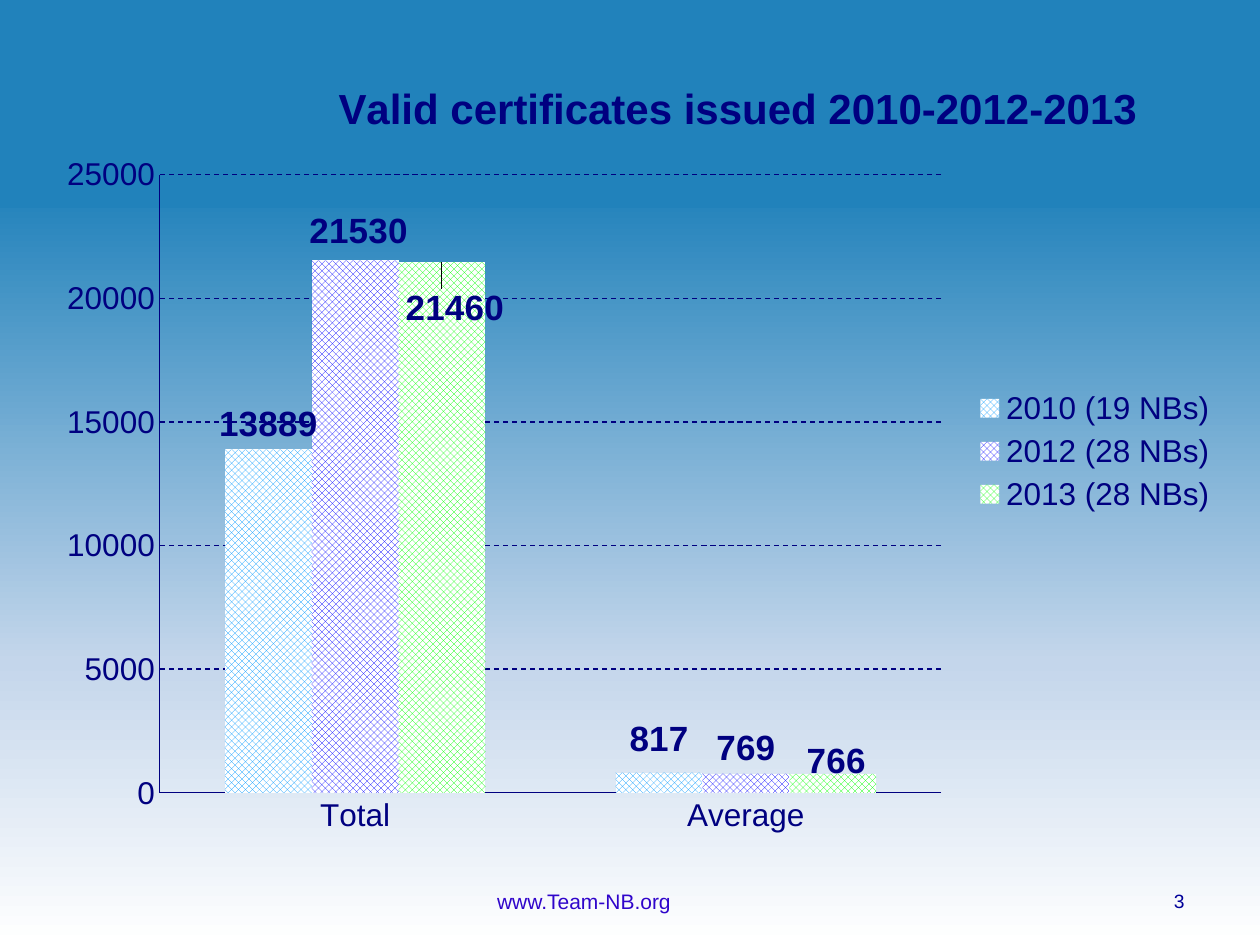
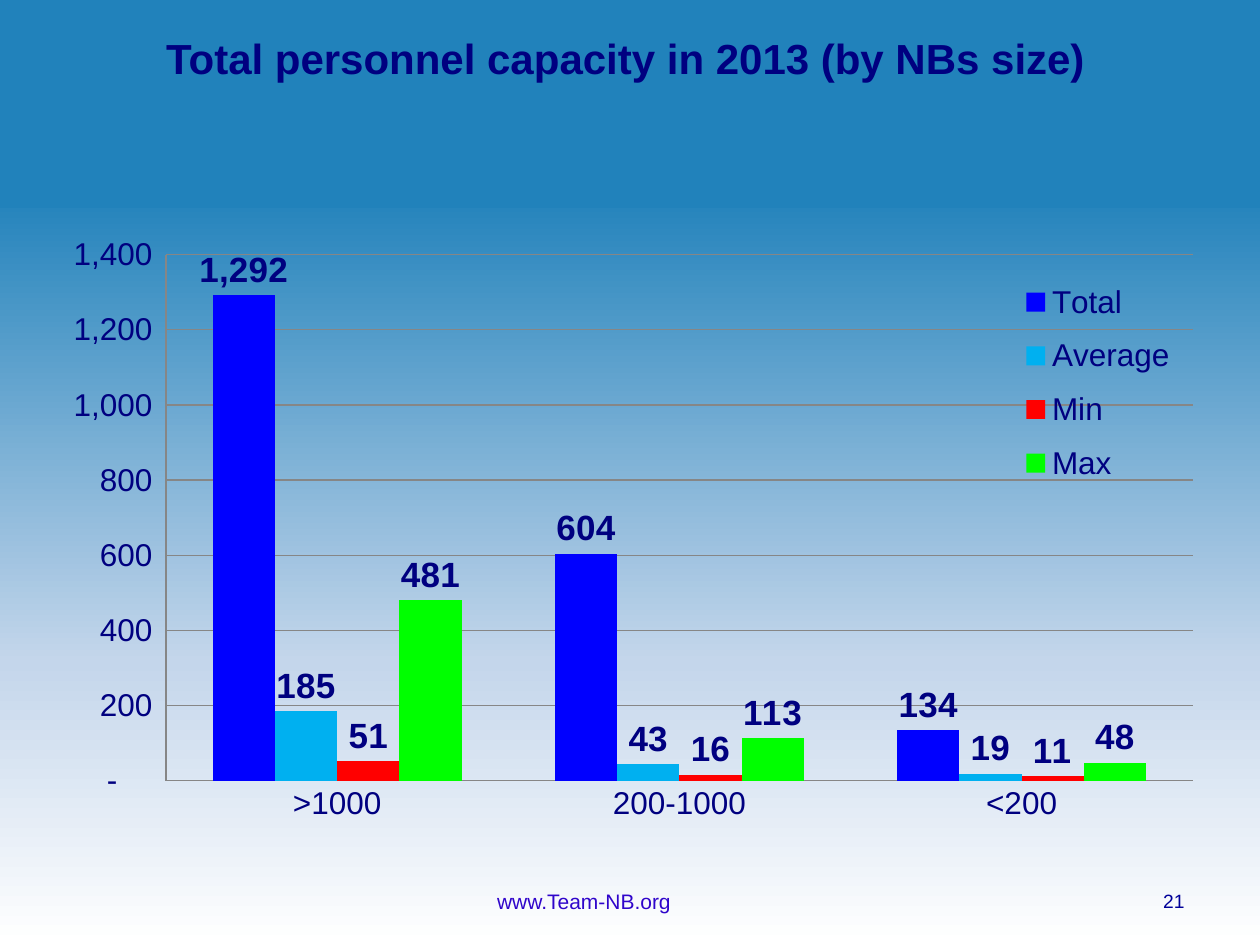
from copy import deepcopy
from dataclasses import dataclass

from lxml import etree
from pptx import Presentation
from pptx.chart.data import CategoryChartData
from pptx.dml.color import RGBColor
from pptx.enum.chart import XL_CHART_TYPE, XL_LABEL_POSITION, XL_LEGEND_POSITION, XL_TICK_MARK
from pptx.enum.dml import MSO_LINE, MSO_PATTERN
from pptx.enum.shapes import MSO_SHAPE
from pptx.enum.text import MSO_ANCHOR, PP_ALIGN
from pptx.oxml.ns import qn
from pptx.util import Inches, Pt

COLUMNS = XL_CHART_TYPE.COLUMN_CLUSTERED
OUTSIDE_END = XL_LABEL_POSITION.OUTSIDE_END
LEGEND_RIGHT = XL_LEGEND_POSITION.RIGHT
NO_TICKS = XL_TICK_MARK.NONE
DASH, SOLID = MSO_LINE.DASH, MSO_LINE.SOLID
CHECKER = MSO_PATTERN.LARGE_CHECKER_BOARD
RECTANGLE = MSO_SHAPE.RECTANGLE
TOP, MIDDLE = MSO_ANCHOR.TOP, MSO_ANCHOR.MIDDLE
CENTER, RIGHT = PP_ALIGN.CENTER, PP_ALIGN.RIGHT


@dataclass(frozen=True)
class Theme:
    font: str = "Arial"
    band: RGBColor = RGBColor.from_string("2182BB")
    haze: RGBColor = RGBColor.from_string("C4D6EB")
    white: RGBColor = RGBColor.from_string("FFFFFF")
    navy: RGBColor = RGBColor.from_string("000080")
    gray: RGBColor = RGBColor.from_string("868686")
    page_number: RGBColor = RGBColor.from_string("000099")
    footer: RGBColor = RGBColor.from_string("2F05CB")
    title_size: Pt = Pt(24)
    label_size: Pt = Pt(20)
    axis_size: Pt = Pt(18)
    footer_size: Pt = Pt(12)
    number_size: Pt = Pt(11)
    hairline: Pt = Pt(0.75)


theme = Theme()


def style_font(font, size, color, bold=False):
    font.name = theme.font
    font.size = size
    font.bold = bold
    font.color.rgb = color


def set_layout(parent, index, **values):
    for old_layout in parent.findall(qn("c:layout")):
        parent.remove(old_layout)
    layout = etree.Element(qn("c:layout"))
    manual = etree.SubElement(layout, qn("c:manualLayout"))
    for name, value in values.items():
        etree.SubElement(manual, qn(f"c:{name}")).set("val", str(value))
    parent.insert(index, layout)


ACCOUNTING = '_ * #,##0_ ;_ * \\-#,##0_ ;_ * "-"??_ ;_ '
SLIDES = [
    {
        "number": "3",
        "title": "Valid certificates issued 2010-2012-2013",
        "title_in_chart": True,
        "frame": (0.35, 0.36, 9.37, 6.38),
        "plot": (0.098, 0.161, 0.662, 0.769),
        "legend": (0.785, 0.42, 0.21, 0.17),
        "categories": ["Total", "Average"],
        "series": [
            ("2010 (19 NBs)", [13889, 817], "0099FF"),
            ("2012 (28 NBs)", [21530, 769], "0101FF"),
            ("2013 (28 NBs)", [21460, 766], "00FF00"),
        ],
        "patterned": True,
        "label_shifts": {
            (0, 1): (0, -0.01),
            (1, 0): (0.003, -0.005),
            (2, 0): (0.011, 0.088),
            (2, 1): (0.003, 0.016),
        },
        "scale": (25000, 5000),
        "format": "0",
        "line": theme.navy,
        "dash": DASH,
    },
    {
        "number": "21",
        "title": "Total personnel capacity in 2013 (by NBs size)",
        "title_in_chart": False,
        "frame": (0.28, 0.84, 9.53, 6.06),
        "plot": (0.109, 0.195, 0.855, 0.689),
        "legend": (0.81, 0.21, 0.15, 0.305),
        "categories": [">1000", "200-1000", "<200"],
        "series": [
            ("Total", [1292, 604, 134], "0000FF"),
            ("Average", [185, 43, 19], "00B0F0"),
            ("Min", [51, 16, 11], "FF0000"),
            ("Max", [481, 113, 48], "00FF00"),
        ],
        "patterned": False,
        "label_shifts": {},
        "scale": (1400, 200),
        "format": ACCOUNTING,
        "line": theme.gray,
        "dash": SOLID,
    },
]

presentation = Presentation()
presentation.slide_width = Inches(10)
presentation.slide_height = Inches(7.5)
blank_layout = presentation.slide_layouts[6]

background = presentation.slide_master.background.fill
background.gradient()
background.gradient_angle = 270
stop_list = presentation.slide_master.element.xpath(".//p:bgPr/a:gradFill/a:gsLst")[0]
stop_list.append(deepcopy(stop_list[-1]))
gradient = [(0.2, theme.band), (0.7, theme.haze), (1, theme.white)]
for stop, (position, color) in zip(background.gradient_stops, gradient):
    stop.position = position
    stop.color.rgb = color

for content in SLIDES:
    slide = presentation.slides.add_slide(blank_layout)
    band = slide.shapes.add_shape(RECTANGLE, 0, 0, Inches(10), Inches(1.64))
    band.shadow.inherit = False
    band.fill.solid()
    band.fill.fore_color.rgb = theme.band
    band.line.color.rgb = theme.band
    band.line.width = Pt(2)

    texts = [
        (content["number"], (7.17, 6.95, 2.33, 0.4), RIGHT, MIDDLE,
         theme.number_size, theme.page_number, False),
        ("www.Team-NB.org", (3.05, 6.95, 3.17, 0.4), CENTER, MIDDLE,
         theme.footer_size, theme.footer, False),
    ]
    if not content["title_in_chart"]:
        texts.append((content["title"], (0.28, 0.21, 9.37, 0.5), CENTER, TOP,
                      theme.title_size, theme.navy, True))
    for text, box, alignment, anchor, size, color, bold in texts:
        text_frame = slide.shapes.add_textbox(*map(Inches, box)).text_frame
        text_frame.word_wrap = True
        text_frame.vertical_anchor = anchor
        paragraph = text_frame.paragraphs[0]
        paragraph.alignment = alignment
        run = paragraph.add_run()
        run.text = text
        style_font(run.font, size, color, bold)

    chart_data = CategoryChartData()
    chart_data.categories = content["categories"]
    for name, values, color in content["series"]:
        chart_data.add_series(name, values)
    frame = map(Inches, content["frame"])
    chart = slide.shapes.add_chart(COLUMNS, *frame, chart_data).chart
    style_font(chart.font, theme.axis_size, theme.navy)

    chart.has_title = content["title_in_chart"]
    if chart.has_title:
        run = chart.chart_title.text_frame.paragraphs[0].add_run()
        run.text = content["title"]
        style_font(run.font, theme.title_size, theme.navy, True)
        title_element = chart.chart_title._element
        set_layout(title_element, 1, xMode="edge", yMode="edge", x=0.243, y=0.035)

    chart.has_legend = True
    chart.legend.position = LEGEND_RIGHT
    chart.legend.include_in_layout = False
    style_font(chart.legend.font, theme.axis_size, theme.navy)
    x, y, w, h = content["legend"]
    set_layout(chart.legend._element, 1, xMode="edge", yMode="edge", x=x, y=y, w=w, h=h)
    x, y, w, h = content["plot"]
    plot_area = chart._chartSpace.chart.plotArea
    set_layout(plot_area, 0, layoutTarget="inner", xMode="edge", yMode="edge",
               x=x, y=y, w=w, h=h)

    value_axis = chart.value_axis
    for axis in (chart.category_axis, value_axis):
        axis.major_tick_mark = NO_TICKS
        axis.minor_tick_mark = NO_TICKS
        axis.format.line.color.rgb = content["line"]
        axis.format.line.width = theme.hairline
        style_font(axis.tick_labels.font, theme.axis_size, theme.navy)
    value_axis.minimum_scale = 0
    value_axis.maximum_scale, value_axis.major_unit = content["scale"]
    value_axis.tick_labels.number_format = content["format"]
    value_axis.tick_labels.number_format_is_linked = False
    value_axis.has_major_gridlines = True
    grid_line = value_axis.major_gridlines.format.line
    grid_line.color.rgb = content["line"]
    grid_line.width = theme.hairline
    grid_line.dash_style = content["dash"]

    plot = chart.plots[0]
    plot.gap_width = 150
    plot.overlap = 0
    plot.vary_by_categories = False
    for series, (name, values, color) in zip(plot.series, content["series"]):
        fill = series.format.fill
        if content["patterned"]:
            fill.patterned()
            fill.pattern = CHECKER
            fill.back_color.rgb = theme.white
        else:
            fill.solid()
        fill.fore_color.rgb = RGBColor.from_string(color)
        labels = series.data_labels
        labels.show_value = True
        labels.position = OUTSIDE_END
        labels.number_format = content["format"]
        labels.number_format_is_linked = False
        style_font(labels.font, theme.label_size, theme.navy, True)

    for (series_index, point_index), (x, y) in content["label_shifts"].items():
        series = plot.series[series_index]
        label = series.points[point_index].data_label
        style_font(label.font, theme.label_size, theme.navy, True)
        label.position = OUTSIDE_END
        label_element = series._element.xpath(
            f"c:dLbls/c:dLbl[c:idx/@val='{point_index}']")[0]
        set_layout(label_element, 1, x=x, y=y)

presentation.save("out.pptx")
